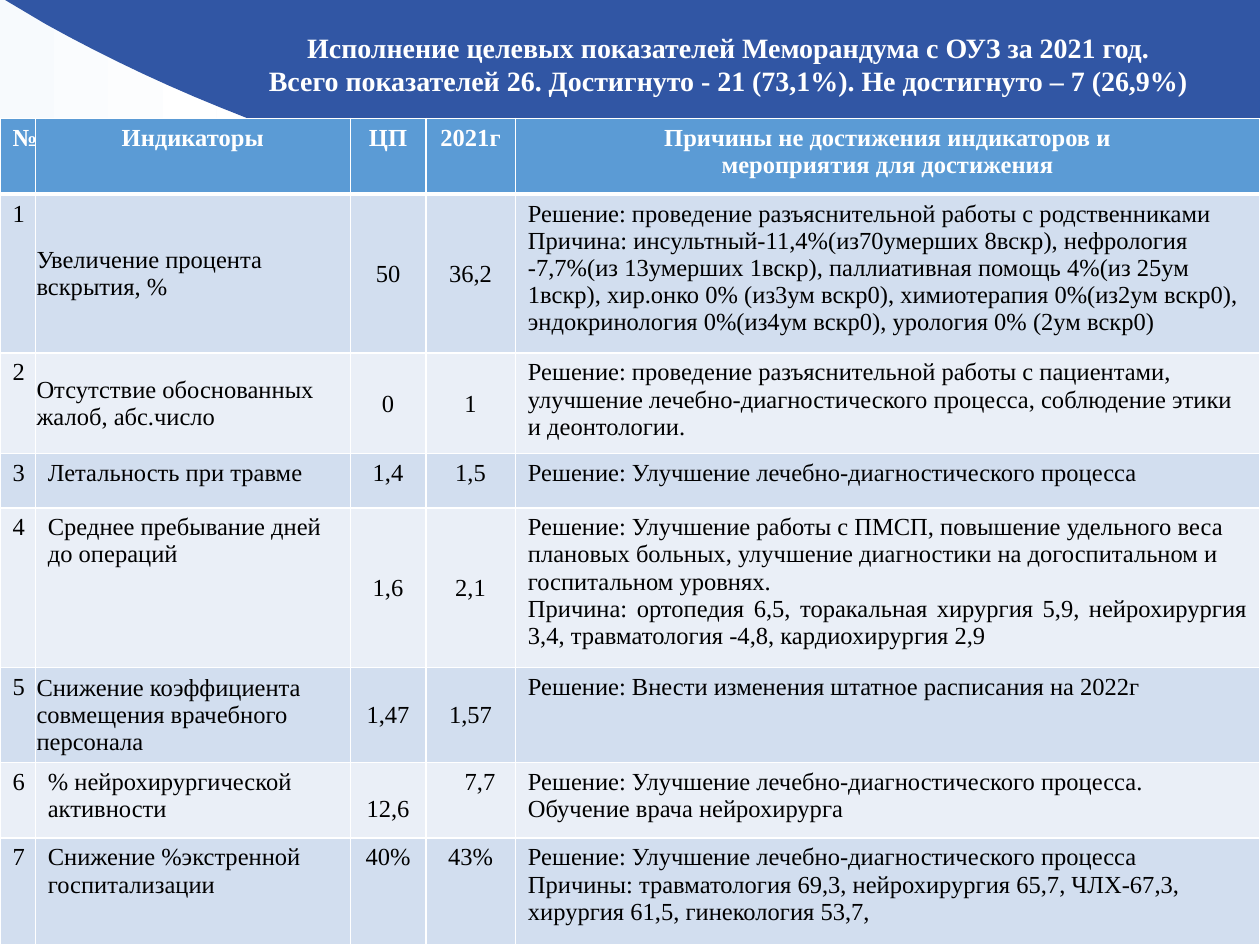
from lxml.etree import SubElement
from pptx import Presentation
from pptx.dml.color import RGBColor
from pptx.enum.shapes import MSO_SHAPE
from pptx.enum.text import MSO_ANCHOR as Anchor, MSO_AUTO_SIZE as AutoSize, PP_ALIGN as Align
from pptx.oxml.ns import qn
from pptx.util import Inches, Pt

FONT = "Times New Roman"
WHITE, BLACK, NAVY, HEADER_BLUE = "FFFFFF", "000000", "3156A4", "5B9BD5"
BANDS = ["D2DEEF", "EAEFF7"]

TITLE = (
    "Исполнение целевых показателей Меморандума с ОУЗ за 2021 год.\n"
    "Всего показателей 26. Достигнуто - 21 (73,1%). Не достигнуто – 7 (26,9%)"
)
ROWS = [
    ("№", "Индикаторы", "ЦП", "2021г",
     "Причины не достижения индикаторов и\nмероприятия для достижения"),
    ("1", "Увеличение процента вскрытия, %", "50", "36,2",
     "Решение: проведение разъяснительной работы с родственниками\n"
     "Причина: инсультный-11,4%(из70умерших 8вскр), нефрология -7,7%(из 13умерших 1вскр), "
     "паллиативная помощь 4%(из 25ум 1вскр), хир.онко 0% (из3ум вскр0), "
     "химиотерапия 0%(из2ум вскр0), эндокринология 0%(из4ум вскр0), урология 0% (2ум вскр0)"),
    ("2", "Отсутствие обоснованных жалоб, абс.число", "0", "1",
     "Решение: проведение разъяснительной работы с пациентами, улучшение "
     "лечебно-диагностического процесса, соблюдение этики и деонтологии."),
    ("3", "Летальность при травме", "1,4", "1,5",
     "Решение: Улучшение лечебно-диагностического процесса"),
    ("4", "Среднее пребывание дней до операций", "1,6", "2,1",
     "Решение: Улучшение работы с ПМСП, повышение удельного веса плановых больных, "
     "улучшение диагностики на догоспитальном и госпитальном уровнях.\n"
     "Причина: ортопедия 6,5, торакальная хирургия 5,9, нейрохирургия 3,4, "
     "травматология -4,8, кардиохирургия 2,9"),
    ("5", "Снижение коэффициента совмещения врачебного персонала", "1,47", "1,57",
     "Решение: Внести изменения штатное расписания на 2022г"),
    ("6", "% нейрохирургической активности", "12,6", "7,7",
     "Решение: Улучшение лечебно-диагностического процесса. Обучение врача нейрохирурга"),
    ("7", "Снижение %экстренной госпитализации", "40%", "43%",
     "Решение: Улучшение лечебно-диагностического процесса\n"
     "Причины: травматология 69,3, нейрохирургия 65,7, ЧЛХ-67,3, хирургия 61,5, "
     "гинекология 53,7,"),
]
COLUMN_WIDTHS = [0.28, 2.5, 0.6, 0.71, 5.91]
ROW_HEIGHTS = [0.6, 1.26, 0.8, 0.43, 1.27, 0.75, 0.6, 0.85]
COLUMN_ALIGNS = [Align.CENTER, Align.LEFT, Align.CENTER, Align.CENTER, Align.LEFT]
TIGHT_CELLS = {(r, c) for r in (1, 2, 4, 5) for c in (1, 2, 3)} - {(4, 1)}
TARGET_6, RESULT_6 = (6, 2), (6, 3)
JUSTIFIED = {(4, 4, 1)}

BANNER_CURVES = [
    [(9.74, 1.84), (9.08, 1.92), (8.39, 1.96), (7.7, 1.96)],
    [(7.7, 1.96), (4.91, 1.96), (2.35, 1.3), (0.36, 0.19)],
]


def rgb(value):
    return RGBColor.from_string(value)


def style_paragraph(paragraph, size, color, bold, align):
    paragraph.alignment = align
    for run in paragraph.runs:
        run.font.name = FONT
        run.font.size = Pt(size)
        run.font.bold = bold
        run.font.color.rgb = rgb(color)


def curve_points(controls, steps=32):
    for step in range(1, steps + 1):
        t = step / steps
        weights = ((1 - t) ** 3, 3 * t * (1 - t) ** 2, 3 * t * t * (1 - t), t ** 3)
        yield tuple(Inches(sum(w * p[axis] for w, p in zip(weights, controls))) for axis in (0, 1))


def add_borders(cell, widths):
    properties = cell._tc.get_or_add_tcPr()
    for index, (side, width) in enumerate(widths.items()):
        line = properties.makeelement(qn(f"a:{side}"), {"w": str(Pt(width))})
        fill = SubElement(line, qn("a:solidFill"))
        SubElement(fill, qn("a:srgbClr"), val=WHITE)
        properties.insert(index, line)


def add_background(slide):
    strip = slide.shapes.add_shape(MSO_SHAPE.RECTANGLE, 0, 0, Inches(1.72), Inches(7.5))
    strip.shadow.inherit = False
    strip.line.fill.background()
    strip.fill.gradient()
    strip.fill.gradient_angle = 0
    for stop, (position, color) in zip(strip.fill.gradient_stops, [(0, "F7FAFD"), (1, WHITE)]):
        stop.position = position
        stop.color.rgb = rgb(color)

    outline = [(Inches(x), Inches(y)) for x, y in [(10, 0), (10, 1.8), (9.74, 1.84)]]
    for controls in BANNER_CURVES:
        outline.extend(curve_points(controls))
    builder = slide.shapes.build_freeform(Inches(0.04), 0)
    builder.add_line_segments(outline, close=True)
    banner = builder.convert_to_shape()
    banner.shadow.inherit = False
    banner.fill.solid()
    banner.fill.fore_color.rgb = rgb(NAVY)
    banner.line.fill.background()


def add_title(slide):
    title = slide.shapes.title
    slide.shapes._spTree.append(title._element)
    title.left, title.top, title.width, title.height = map(Inches, (1.89, 0.19, 7.78, 0.64))
    frame = title.text_frame
    frame.text = TITLE
    frame.word_wrap = True
    frame.auto_size = AutoSize.NONE
    frame.vertical_anchor = Anchor.TOP
    for paragraph in frame.paragraphs:
        style_paragraph(paragraph, 16, WHITE, True, Align.CENTER)


def fill_cell(cell, r, c, text):
    header = r == 0
    cell.text_frame.text = text
    for index, paragraph in enumerate(cell.text_frame.paragraphs):
        align = Align.CENTER if header else COLUMN_ALIGNS[c]
        if (r, c, index) in JUSTIFIED:
            align = Align.JUSTIFY
        style_paragraph(paragraph, 14, WHITE if header else BLACK, header, align)
    if (r, c) in TIGHT_CELLS:
        cell.vertical_anchor = Anchor.MIDDLE
        cell.margin_left = cell.margin_right = cell.margin_top = Inches(0.01)
        cell.margin_bottom = 0
    elif (r, c) == TARGET_6:
        cell.vertical_anchor = Anchor.BOTTOM
        cell.margin_bottom = Inches(0.12)
    elif (r, c) == RESULT_6:
        cell.margin_left = Inches(0.25)
    cell.fill.solid()
    cell.fill.fore_color.rgb = rgb(HEADER_BLUE if header else BANDS[(r - 1) % 2])
    add_borders(cell, {"lnL": 1, "lnR": 1, "lnT": 3 if r == 1 else 1, "lnB": 3 if header else 1})


def add_indicators(slide):
    indicators = slide.shapes.add_table(
        len(ROWS), len(COLUMN_WIDTHS), 0, Inches(0.94),
        Inches(sum(COLUMN_WIDTHS)), Inches(sum(ROW_HEIGHTS))).table
    for column, width in zip(indicators.columns, COLUMN_WIDTHS):
        column.width = Inches(width)
    for row, height in zip(indicators.rows, ROW_HEIGHTS):
        row.height = Inches(height)
    for r, texts in enumerate(ROWS):
        for c, text in enumerate(texts):
            fill_cell(indicators.cell(r, c), r, c, text)


def main():
    deck = Presentation()
    deck.slide_width, deck.slide_height = Inches(10), Inches(7.5)
    slide = deck.slides.add_slide(deck.slide_layouts[5])
    add_background(slide)
    add_title(slide)
    add_indicators(slide)
    deck.save("out.pptx")


if __name__ == "__main__":
    main()
